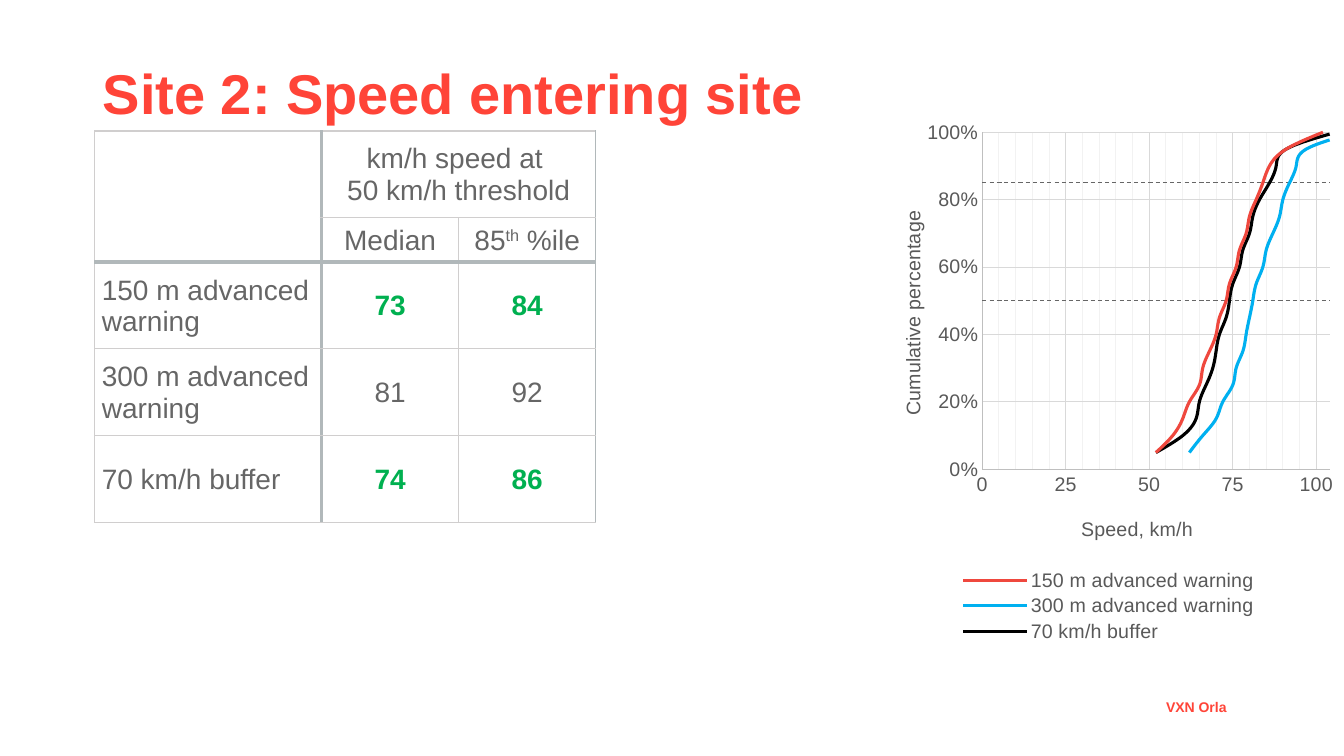
import pptx
import pptx.chart.data
import pptx.dml.color
import pptx.enum.chart
import pptx.enum.dml
import pptx.enum.text
import pptx.oxml
import pptx.oxml.ns
import pptx.util

HUES = {"red": "FF4438", "text": "666666", "good": "00B050", "pale": "D0CECE",
        "steel": "B1B8BA", "label": "595959", "axis": "BFBFBF", "grid": "D9D9D9",
        "faint": "F2F2F2", "rose": "EF483E", "blue": "00B0F0", "black": "000000"}
ALIGN = pptx.enum.text.PP_ALIGN
MIDDLE = pptx.enum.text.MSO_ANCHOR.MIDDLE
KIND = pptx.enum.chart
Pt = pptx.util.Pt

deck = pptx.Presentation()
deck.slide_width = pptx.util.Inches(13.33)
deck.slide_height = pptx.util.Inches(7.5)
col, row = deck.slide_width / 100, deck.slide_height / 100
slide = deck.slides.add_slide(deck.slide_layouts[5])


def hue(name):
    return pptx.dml.color.RGBColor.from_string(HUES[name])


def write(frame, *parts, size=20, color="text", bold=False, align=ALIGN.LEFT, space=None):
    para = frame.paragraphs[0]
    para.alignment = align
    if space:
        para.line_spacing = space
    for part in parts:
        for num, line in enumerate(part.split("\n")):
            if num:
                para.add_line_break()
            run = para.add_run()
            run.text = line
            run.font.name, run.font.size, run.font.bold = "Arial", Pt(size), bold
            run.font.color.rgb = hue(color)
            if part == "th":
                run.font._element.set("baseline", "30000")


title = slide.shapes.title
title.left, title.top = int(6.9 * col), int(8 * row)
title.width, title.height = int(84.1 * col), int(9.5 * row)
title.text_frame.auto_size = pptx.enum.text.MSO_AUTO_SIZE.NONE
title.text_frame.vertical_anchor = MIDDLE
write(title.text_frame, "Site 2: Speed entering site", size=40, color="red", bold=True, space=0.9)

foot = slide.shapes.add_textbox(int(75.4 * col), int(92 * row), int(16.6 * col), int(3.6 * row))
foot.text_frame.word_wrap = True
write(foot.text_frame, "VXN Orla", size=10, color="red", bold=True, align=ALIGN.RIGHT, space=0.9)

ROWS = [["", ["km/h speed at \n50 km/h threshold"], ""],
        ["", ["Median"], ["85", "th", " %ile"]],
        [["150 m advanced warning"], ["73"], ["84"]],
        [["300 m advanced warning"], ["81"], ["92"]],
        [["70 km/h buffer"], ["74"], ["86"]]]
table = slide.shapes.add_table(5, 5, int(7.05 * col), int(17.33 * row),
                               int(57.54 * col), int(51.75 * row)).table
table.first_row = table.horz_banding = False
for num in range(5):
    table.columns[num].width = int((10.2 if num else 16.88) * col)
    table.rows[num].height = int((5.87 if num == 1 else 11.47) * row)
table.cell(0, 0).merge(table.cell(1, 0))
table.cell(0, 1).merge(table.cell(0, 2))
table.cell(0, 3).merge(table.cell(0, 4))

for y in range(5):
    for x in range(5):
        cell = table.cell(y, x)
        cell.vertical_anchor = MIDDLE
        cell.margin_left = cell.margin_right = pptx.util.Inches(0.07)
        cell.margin_top, cell.margin_bottom = pptx.util.Inches(0.01), 0
        left, right = (1, 3) if y == 0 and x in (1, 2) else (x, x + 1)
        top, base = (0, 2) if x == 0 and y < 2 else (y, y + 1)
        edges = {"lnL": (left == 1, left == 3), "lnR": (right == 1, right == 3),
                 "lnT": (top == 2, False), "lnB": (base == 2, False)}
        for tag, (thick, steel) in edges.items():
            tint = HUES["steel" if thick or steel else "pale"]
            drawn = x < 3 or left == 3 and tag == "lnL"
            fill = f'<a:solidFill><a:srgbClr val="{tint}"/></a:solidFill>' if drawn else "<a:noFill/>"
            cell._tc.get_or_add_tcPr().append(pptx.oxml.parse_xml(
                f'<a:{tag} {pptx.oxml.ns.nsdecls("a")} w="{Pt(3 if thick and x < 3 else 1)}">{fill}</a:{tag}>'))
        cell.fill.background()
        if x < 3 and ROWS[y][x]:
            good = x > 0 and y in (2, 4)
            write(cell.text_frame, *ROWS[y][x], bold=good, color="good" if good else "text",
                  align=ALIGN.CENTER if x else ALIGN.LEFT)

SPEEDS = {
    "150 m advanced warning": ("rose", [52, 57, 60, 62, 65, 66, 68, 70, 71, 73,
                                        74, 76, 77, 79, 80, 82, 84, 86, 91, 102]),
    "300 m advanced warning": ("blue", [62, 66, 70, 72, 75, 76, 78, 79, 80, 81,
                                        82, 84, 85, 87, 89, 90, 92, 94, 97, 112]),
    "70 km/h buffer": ("black", [52, 60, 64, 65, 67, 69, 70, 71, 73, 74,
                                 75, 77, 78, 80, 81, 83, 86, 88, 91, 106])}
data = pptx.chart.data.XyChartData(number_format="0%")
for name, (tint, speeds) in SPEEDS.items():
    line = data.add_series(name)
    for step, speed in enumerate(speeds, 1):
        line.add_data_point(speed, step * 5 / 100)
for name, level in (("Series 4", 0.85), ("Series 5", 0.5)):
    line = data.add_series(name)
    for speed in (0, 110):
        line.add_data_point(speed, level)
chart = slide.shapes.add_chart(KIND.XL_CHART_TYPE.XY_SCATTER_SMOOTH_NO_MARKERS,
                               int(64.59 * col), int(14.67 * row),
                               int(35.41 * col), int(70.8 * row), data).chart
chart.has_title = False
chart.font.name, chart.font.size = "Arial", Pt(14)
chart.font.color.rgb = hue("label")
chart.plots[0].vary_by_categories = False

tints = [tint for tint, speeds in SPEEDS.values()] + ["text"] * 2
for num, (line, tint) in enumerate(zip(chart.plots[0].series, tints)):
    line.marker.style = KIND.XL_MARKER_STYLE.NONE
    line.format.line.color.rgb = hue(tint)
    line.format.line.width = Pt(2.25 if num < 3 else 0.75)
    if num > 2:
        line.format.line.dash_style = pptx.enum.dml.MSO_LINE.DASH
    for smooth in line._element.xpath("c:smooth"):
        smooth.set("val", "1" if num < 3 else "0")

across, up = chart.category_axis, chart.value_axis
for axis, name, most, unit, form in ((across, "Speed, km/h", 104, 25, "0"),
                                     (up, "Cumulative percentage", 1, 0.2, "0%")):
    axis.minimum_scale, axis.maximum_scale, axis.major_unit = 0, most, unit
    axis.major_tick_mark = axis.minor_tick_mark = KIND.XL_TICK_MARK.NONE
    axis.has_major_gridlines = True
    for part, tint in ((axis, "axis"), (axis.major_gridlines, "grid")):
        part.format.line.color.rgb = hue(tint)
        part.format.line.width = Pt(0.75)
    marks = axis.tick_labels
    marks.number_format, marks.number_format_is_linked = form, False
    marks.font.name, marks.font.size = "Arial", Pt(14)
    marks.font.color.rgb = hue("label")
    write(axis.axis_title.text_frame, name, size=14, color="label", align=ALIGN.CENTER)
up.axis_title.text_frame._txBody.bodyPr.set("rot", "-5400000")
across.minor_unit = 5
across.has_minor_gridlines = True
across._element.xpath("c:minorGridlines")[0].append(pptx.oxml.parse_xml(
    f'<c:spPr {pptx.oxml.ns.nsdecls("c", "a")}><a:ln w="{Pt(0.75)}"><a:solidFill>'
    f'<a:srgbClr val="{HUES["faint"]}"/></a:solidFill></a:ln></c:spPr>'))

chart.has_legend = True
key = chart.legend
key.position = KIND.XL_LEGEND_POSITION.BOTTOM
key.include_in_layout = False
key.font.name, key.font.size = "Arial", Pt(14)
key.font.color.rgb = hue("label")
space = pptx.oxml.ns.nsdecls("c")
for spot, num in ((1, 3), (2, 4)):
    key._element.insert(spot, pptx.oxml.parse_xml(
        f'<c:legendEntry {space}><c:idx val="{num}"/><c:delete val="1"/></c:legendEntry>'))

plot = chart._chartSpace.chart.plotArea
for part, spot, shares in ((plot, 0, (0.24, 0.04, 0.73, 0.63)),
                           (across.axis_title._element, 1, (0.44, 0.75)),
                           (up.axis_title._element, 1, (0.06, 0.18)),
                           (key._element, 3, (0.18, 0.85, 0.65, 0.15))):
    for old in part.xpath("c:layout"):
        part.remove(old)
    inner = '<c:layoutTarget val="inner"/>' if part is plot else ""
    modes = '<c:xMode val="edge"/><c:yMode val="edge"/>'
    sizes = "".join(f'<c:{tag} val="{share}"/>' for tag, share in zip("xywh", shares))
    part.insert(spot, pptx.oxml.parse_xml(
        f"<c:layout {space}><c:manualLayout>{inner}{modes}{sizes}</c:manualLayout></c:layout>"))

deck.save("out.pptx")
